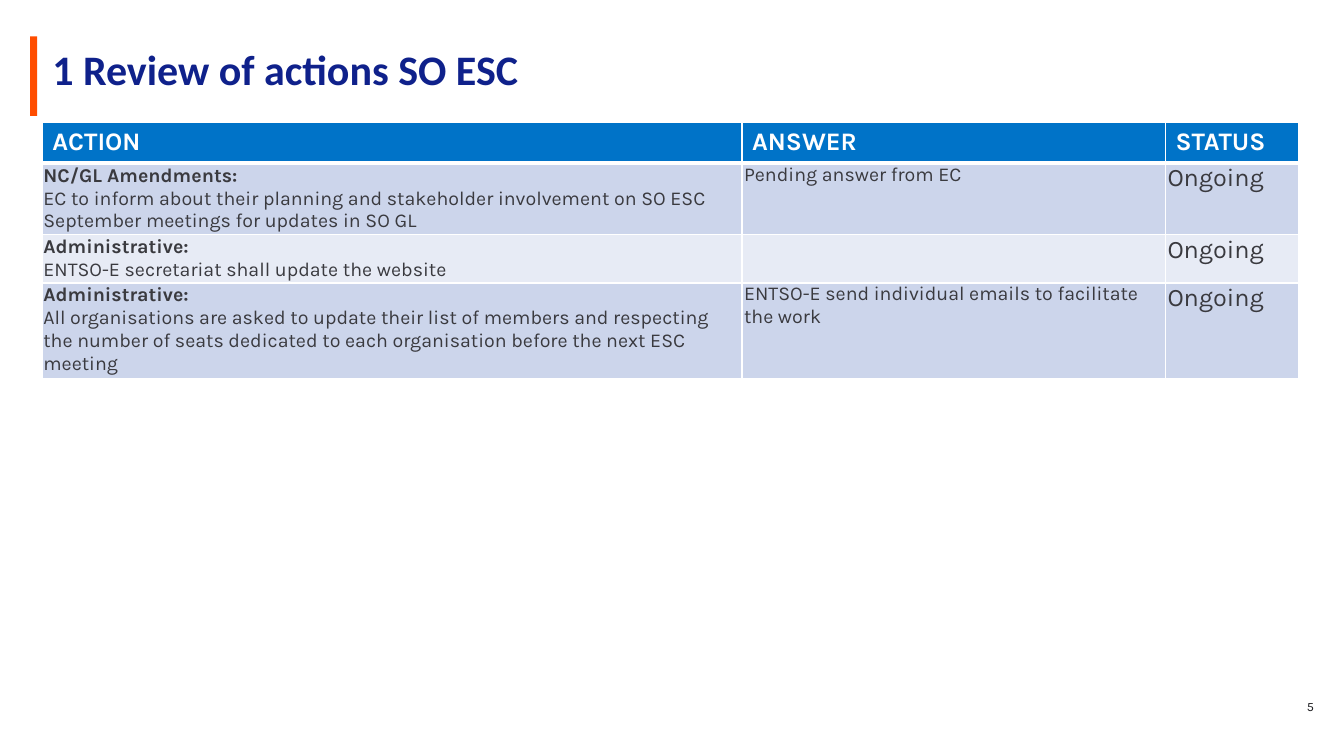
from dataclasses import dataclass

from lxml import etree
from pptx import Presentation
from pptx.dml.color import RGBColor
from pptx.enum.shapes import MSO_SHAPE
from pptx.enum.text import MSO_ANCHOR, PP_ALIGN
from pptx.oxml.ns import qn
from pptx.util import Inches, Pt

RECTANGLE = MSO_SHAPE.RECTANGLE
MIDDLE = MSO_ANCHOR.MIDDLE
LEFT, RIGHT = PP_ALIGN.LEFT, PP_ALIGN.RIGHT


@dataclass(frozen=True)
class Theme:
    heading_font: str = "Calibri"
    body_font: str = "Karla"
    navy: str = "0F218B"
    orange: str = "FF4D00"
    blue: str = "0073C8"
    white: str = "FFFFFF"
    dark: str = "3A3A3F"
    black: str = "1D1D20"
    bands: tuple[str, str] = ("CCD5EB", "E7EBF5")
    title_size: float = 30
    large_size: float = 18
    body_size: float = 14
    number_size: float = 9


@dataclass(frozen=True)
class Style:
    font: str
    size: float
    color: str
    bold: bool = False


@dataclass(frozen=True)
class Label:
    text: str
    left: float
    top: float
    width: float
    height: float
    style: Style
    spacing: float
    align: PP_ALIGN


@dataclass(frozen=True)
class Action:
    topic: str
    task: str
    answer: str
    status: str
    height: float


THEME = Theme()
TITLE = Style(THEME.heading_font, THEME.title_size, THEME.navy, True)
NUMBER = Style(THEME.body_font, THEME.number_size, THEME.black)
HEADER = Style(THEME.body_font, THEME.large_size, THEME.white, True)
TOPIC = Style(THEME.body_font, THEME.body_size, THEME.dark, True)
BODY = Style(THEME.body_font, THEME.body_size, THEME.dark)
STATUS = Style(THEME.body_font, THEME.large_size, THEME.dark)

LABELS = (
    Label("1 Review of actions SO ESC", 0.42, 0.51, 12.71, 0.39, TITLE, 32, LEFT),
    Label("5", 6.75, 6.82, 6.38, 0.4, NUMBER, 9, RIGHT),
)
HEADINGS = ("ACTION", "ANSWER", "STATUS")
COLUMN_WIDTHS = (6.94, 4.2, 1.32)
HEADER_HEIGHT = 0.41
ACTIONS = (
    Action("NC/GL Amendments:",
           "EC to inform about their planning and stakeholder involvement on SO ESC "
           "September meetings for updates in SO GL",
           "Pending answer from EC", "Ongoing", 0.68),
    Action("Administrative:", "ENTSO-E secretariat shall update the website",
           "", "Ongoing", 0.46),
    Action("Administrative:",
           "All organisations are asked to update their list of members and respecting "
           "the number of seats dedicated to each organisation before the next ESC meeting",
           "ENTSO-E send individual emails to facilitate the work", "Ongoing", 0.91),
)


def style_paragraph(para, style: Style) -> None:
    for span in para.runs:
        span.font.name = style.font
        span.font.size = Pt(style.size)
        span.font.bold = style.bold
        span.font.color.rgb = RGBColor.from_string(style.color)


def add_label(page, label: Label) -> None:
    box = page.shapes.add_textbox(Inches(label.left), Inches(label.top),
                                  Inches(label.width), Inches(label.height))
    frame = box.text_frame
    frame.word_wrap = True
    frame.vertical_anchor = MIDDLE
    frame.text = label.text
    para = frame.paragraphs[0]
    para.alignment = label.align
    para.line_spacing = Pt(label.spacing)
    style_paragraph(para, label.style)


def set_borders(cell, bottom: float = 1) -> None:
    properties = cell._tc.get_or_add_tcPr()
    widths = {"a:lnL": 1, "a:lnR": 1, "a:lnT": 1, "a:lnB": bottom}
    for position, (tag, width) in enumerate(widths.items()):
        line = etree.Element(qn(tag), w=str(Pt(width)))
        fill = etree.SubElement(line, qn("a:solidFill"))
        etree.SubElement(fill, qn("a:srgbClr"), val=THEME.white)
        properties.insert(position, line)


def fill_cell(cell, lines: tuple[str, ...], styles: tuple[Style, ...],
              color: str, bottom: float = 1) -> None:
    cell.fill.solid()
    cell.fill.fore_color.rgb = RGBColor.from_string(color)
    set_borders(cell, bottom)
    cell.text_frame.text = "\n".join(lines)
    for para, style in zip(cell.text_frame.paragraphs, styles):
        style_paragraph(para, style)


def set_margins(cell, side: float, top: float) -> None:
    cell.margin_left = cell.margin_right = Inches(side)
    cell.margin_top, cell.margin_bottom = Inches(top), 0


def add_action_table(page) -> None:
    heights = (HEADER_HEIGHT, *(action.height for action in ACTIONS))
    table = page.shapes.add_table(
        len(heights), len(HEADINGS), Inches(0.42), Inches(1.21),
        Inches(sum(COLUMN_WIDTHS)), Inches(sum(heights))).table
    for column, width in zip(table.columns, COLUMN_WIDTHS):
        column.width = Inches(width)
    for row, height in zip(table.rows, heights):
        row.height = Inches(height)

    # Header row
    for index, heading in enumerate(HEADINGS):
        fill_cell(table.cell(0, index), (heading,), (HEADER,), THEME.blue, bottom=3)

    # One banded row per action
    for index, action in enumerate(ACTIONS):
        band = THEME.bands[index % 2]
        task, answer, status = table.rows[index + 1].cells
        fill_cell(task, (action.topic, action.task), (TOPIC, BODY), band)
        fill_cell(answer, (action.answer,), (BODY,), band)
        fill_cell(status, (action.status,), (STATUS,), band)
        set_margins(task, 0.01, 0.01)
        set_margins(answer, 0.02, 0)
        set_margins(status, 0.02, 0)


def add_accent_bar(page) -> None:
    bar = page.shapes.add_shape(RECTANGLE, Inches(0.3), Inches(0.36),
                                Inches(0.07), Inches(0.79))
    bar.shadow.inherit = False
    bar.fill.solid()
    bar.fill.fore_color.rgb = RGBColor.from_string(THEME.orange)
    bar.line.fill.background()


def main() -> None:
    deck = Presentation()
    deck.slide_width, deck.slide_height = Inches(13.33), Inches(7.5)
    page = deck.slides.add_slide(deck.slide_layouts[6])
    add_accent_bar(page)
    for label in LABELS:
        add_label(page, label)
    add_action_table(page)
    deck.save("out.pptx")


if __name__ == "__main__":
    main()
